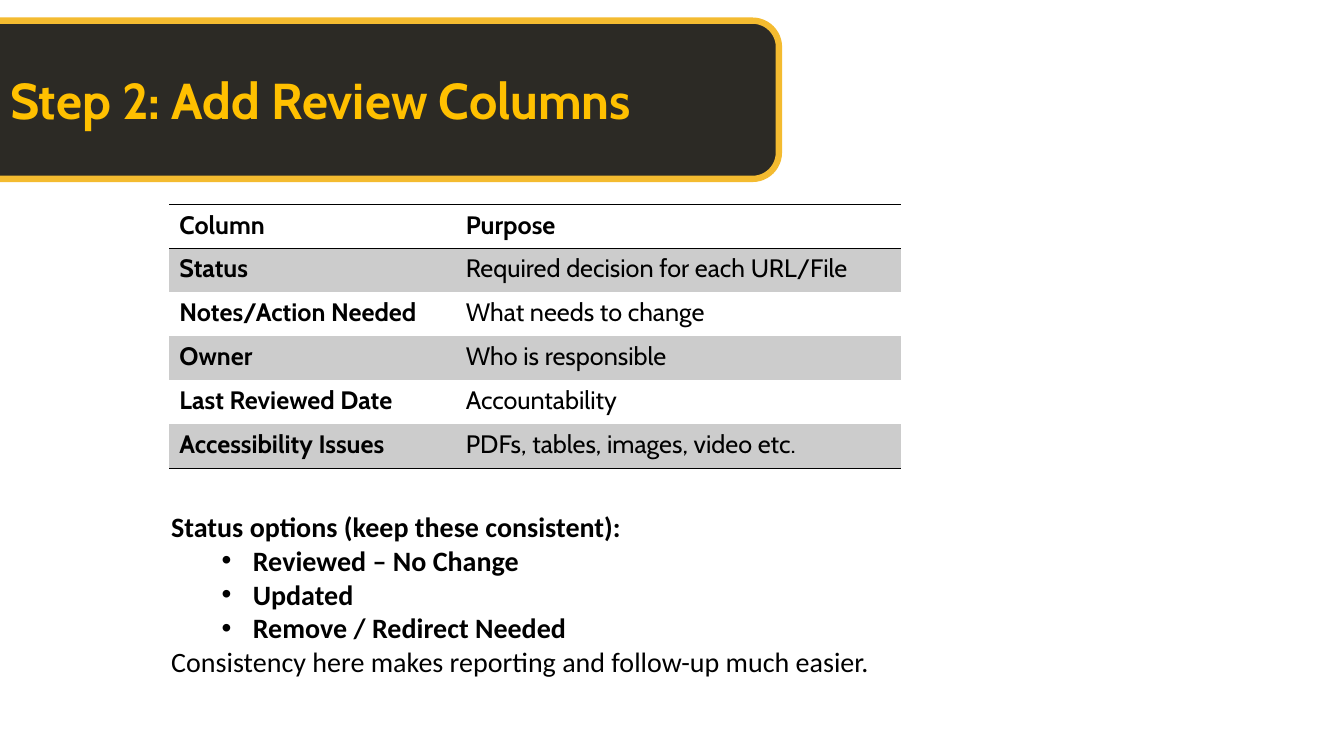
from lxml import etree
from pptx import Presentation
from pptx.dml.color import RGBColor
from pptx.enum.shapes import MSO_SHAPE as SHAPE
from pptx.enum.text import MSO_ANCHOR as ANCHOR, MSO_AUTO_SIZE as AUTO_SIZE, PP_ALIGN as ALIGN
from pptx.oxml import parse_xml
from pptx.oxml.ns import nsdecls, qn
from pptx.util import Inches, Pt

# Content
TITLE = "Step 2: Add Review Columns"
REVIEW_COLUMNS = [
    ("Column", "Purpose"),
    ("Status", "Required decision for each URL/File"),
    ("Notes/Action Needed", "What needs to change"),
    ("Owner", "Who is responsible"),
    ("Last Reviewed Date", "Accountability"),
    ("Accessibility Issues", "PDFs, tables, images, video etc."),
]
STATUS_LINES = [  # text, bold, bulleted
    ("Status options (keep these consistent):", True, False),
    ("Reviewed – No Change", True, True),
    ("Updated", True, True),
    ("Remove / Redirect Needed", True, True),
    ("Consistency here makes reporting and follow-up much easier.", False, False),
]
COLUMN_WIDTHS = (2.84, 4.42)
ROW_HEIGHT = 0.436
NO_STYLE_NO_GRID = "{2D5ABB26-0587-4C30-8999-92F81FD0307C}"


def color(hex_value):
    return RGBColor.from_string(hex_value)


def style_font(paragraph, name, size, hex_value, bold):
    font = paragraph.font
    font.name, font.size, font.bold = name, Pt(size), bold
    font.color.rgb = color(hex_value)


def add_rule(cell, side, position):
    cell_props = cell._tc.get_or_add_tcPr()
    cell_props.insert(position, parse_xml(
        f'<a:{side} {nsdecls("a")} w="{Pt(1)}"><a:solidFill>'
        f'<a:srgbClr val="000000"/></a:solidFill></a:{side}>'))


def add_bullet(paragraph):
    props = paragraph._p.get_or_add_pPr()
    props.set("marL", str(Inches(0.81)))
    props.set("indent", str(Inches(-0.31)))
    etree.SubElement(props, qn("a:buFont")).set("typeface", "Arial")
    etree.SubElement(props, qn("a:buChar")).set("char", "•")


prs = Presentation()
prs.slide_width, prs.slide_height = Inches(13.33), Inches(7.5)
slide = prs.slides.add_slide(prs.slide_layouts[5])
shapes = slide.shapes

# Banner, turned so its rounded end faces right, behind the title
banner = shapes.add_shape(SHAPE.ROUND_2_SAME_RECTANGLE,
                          Inches(3.03), Inches(-2.92), Inches(1.57), Inches(7.82))
banner.rotation = 90
banner.shadow.inherit = False
banner.fill.solid()
banner.fill.fore_color.rgb = color("2C2A25")
banner.line.color.rgb = color("F4BB30")
banner.line.width = Pt(4.5)
shapes.title.element.addprevious(banner.element)

# Title
title = shapes.title
title.left, title.top, title.width, title.height = map(Inches, (0, 0.64, 7.4, 0.71))
title_text = title.text_frame
title_text.text = TITLE
title_text.word_wrap = True
title_text.auto_size = AUTO_SIZE.NONE
title_text.vertical_anchor = ANCHOR.TOP
title_text.paragraphs[0].alignment = ALIGN.LEFT
style_font(title_text.paragraphs[0], "Cabin", 36, "FFC000", True)

# Review columns table
last_row = len(REVIEW_COLUMNS) - 1
table = shapes.add_table(len(REVIEW_COLUMNS), len(COLUMN_WIDTHS), Inches(1.68), Inches(2.03),
                         Inches(sum(COLUMN_WIDTHS)),
                         Inches(ROW_HEIGHT * len(REVIEW_COLUMNS))).table
table._tbl.tblPr.find(qn("a:tableStyleId")).text = NO_STYLE_NO_GRID
table.horz_banding = False
for column, width in zip(table.columns, COLUMN_WIDTHS):
    column.width = Inches(width)
for r, entries in enumerate(REVIEW_COLUMNS):
    for c, entry in enumerate(entries):
        cell = table.cell(r, c)
        cell.text = entry
        style_font(cell.text_frame.paragraphs[0], "Cabin", 18, "000000", r == 0 or c == 0)
        if r % 2:
            cell.fill.solid()
            cell.fill.fore_color.rgb = color("CCCCCC")
        else:
            cell.fill.background()
        if r == 0:
            add_rule(cell, "lnT", 0)
            add_rule(cell, "lnB", 1)
        elif r == last_row:
            add_rule(cell, "lnB", 0)

# Status options
options = shapes.add_textbox(Inches(1.6), Inches(5.01), Inches(8.13), Inches(2.12)).text_frame
options.word_wrap = True
for i, (line, bold, bulleted) in enumerate(STATUS_LINES):
    paragraph = options.add_paragraph() if i else options.paragraphs[0]
    paragraph.text = line
    if bulleted:
        paragraph.level = 1
        add_bullet(paragraph)
    style_font(paragraph, "Calibri", 20, "000000", bold)

prs.save("out.pptx")
